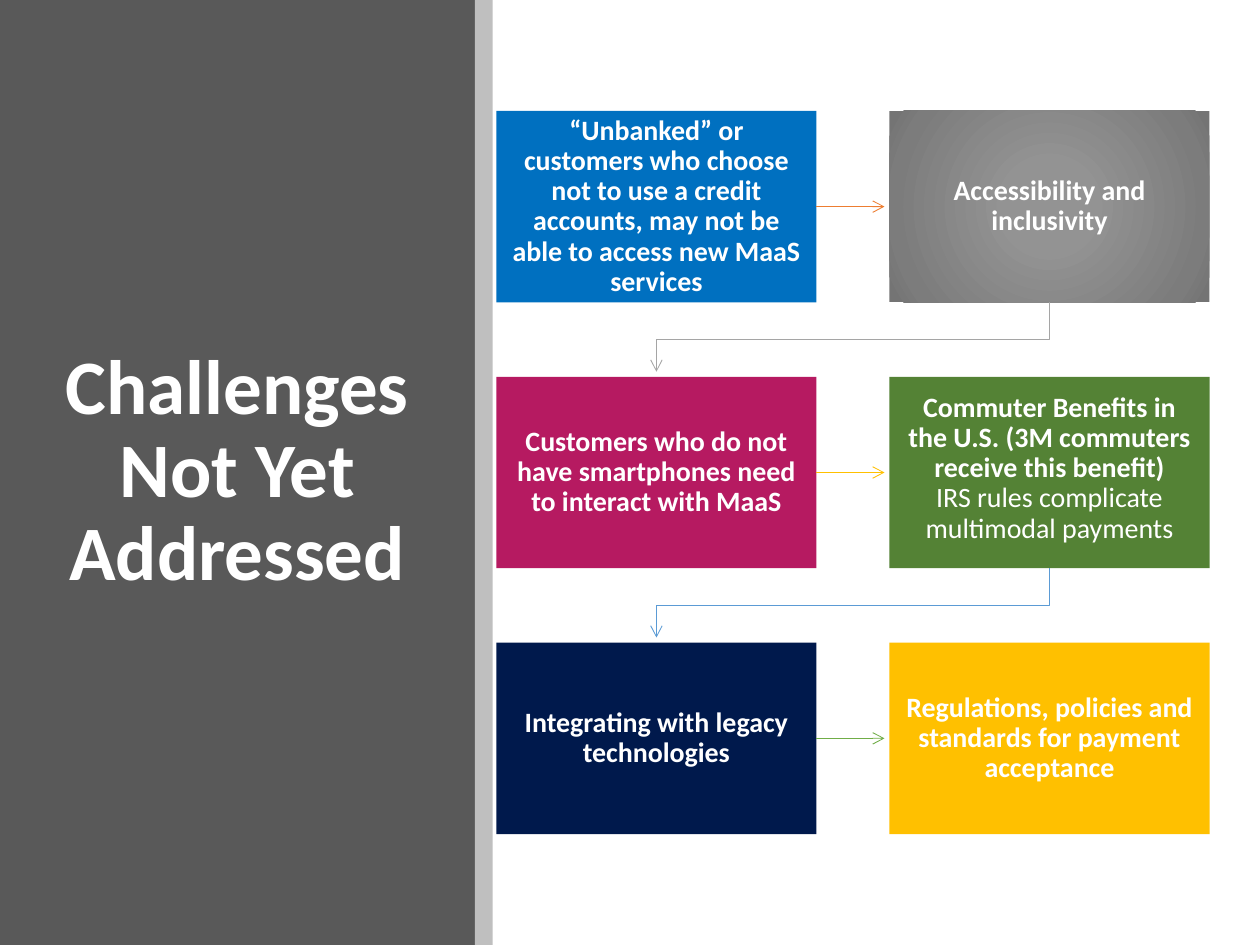
from pptx import Presentation
from pptx.dml.color import RGBColor
from pptx.enum.shapes import MSO_CONNECTOR as Connector, MSO_SHAPE as Preset
from pptx.enum.text import MSO_ANCHOR as Anchor, PP_ALIGN as Align
from pptx.oxml import parse_xml
from pptx.oxml.ns import nsdecls
from pptx.util import Inches, Pt

COLORS = {
    "title": "595959", "strip": "BFBFBF", "text": "FFFFFF",
    "blue": "0070C0", "magenta": "B61A61", "green": "548235",
    "navy": "00194C", "amber": "FFC000", "gray": "939393",
    "orange_line": "ED7D31", "gray_line": "A5A5A5", "amber_line": "FFC000",
    "blue_line": "5B9BD5", "green_line": "70AD47",
}
GRAY_STOPS = [(0, "939393"), (23, "939393"), (84, "7C7C7C"), (97, "747474")]
GRID_LEFT, GRID_TOP = 3.94, 0.88
BOX_WIDTH, BOX_HEIGHT = 2.54, 1.52
COLUMN_STEP, ROW_STEP = 3.12, 2.11
ARROW_GAP = 0.04
ROWS = [
    [("blue", ["“Unbanked” or customers who choose not to use a credit accounts, "
               "may not be able to access new MaaS services"]),
     ("gray", ["Accessibility and inclusivity"])],
    [("magenta", ["Customers who do not have smartphones need to interact with MaaS"]),
     ("green", ["Commuter Benefits in the U.S. (3M commuters receive this benefit)",
                "IRS rules complicate multimodal payments"])],
    [("navy", ["Integrating with legacy technologies"]),
     ("amber", ["Regulations, policies and standards for payment acceptance"])],
]
ACROSS_LINES = ["orange_line", "amber_line", "green_line"]
DOWN_LINES = ["gray_line", "blue_line"]


def color(name):
    """Return the named color."""
    return RGBColor.from_string(COLORS[name])


def add_block(slide, left, top, width, height, fill):
    """Add a plain filled rectangle, in inches."""
    shape = slide.shapes.add_shape(
        Preset.RECTANGLE, Inches(left), Inches(top), Inches(width), Inches(height))
    shape.shadow.inherit = False
    shape.fill.solid()
    shape.fill.fore_color.rgb = color(fill)
    shape.line.fill.background()
    return shape


def add_run(paragraph, text, size, bold=True):
    """Add one white run."""
    run = paragraph.add_run()
    run.text = text
    run.font.name = "Calibri"
    run.font.size = Pt(size)
    run.font.bold = bold
    run.font.color.rgb = color("text")


def write_lines(shape, lines, size):
    """Write a bold first line and regular lines after it, centred."""
    frame = shape.text_frame
    frame.word_wrap = True
    frame.vertical_anchor = Anchor.MIDDLE
    paragraph = frame.paragraphs[0]
    paragraph.alignment = Align.CENTER
    paragraph.line_spacing = 0.9
    for index, line in enumerate(lines):
        if index:
            paragraph.add_line_break()
        add_run(paragraph, line, size, bold=index == 0)


def set_radial_fill(shape, stops):
    """Fill a shape with a gradient spreading from its centre."""
    marks = "".join(f'<a:gs pos="{share * 1000}"><a:srgbClr val="{value}"/></a:gs>'
                    for share, value in stops)
    gradient = parse_xml(
        f'<a:gradFill {nsdecls("a")} rotWithShape="1"><a:gsLst>{marks}</a:gsLst>'
        '<a:path path="circle"><a:fillToRect l="50000" t="50000" r="50000" b="50000"/>'
        '</a:path></a:gradFill>')
    properties = shape.element.spPr
    properties.replace(properties.find("{*}solidFill"), gradient)


def add_card(slide, column, row, fill, lines):
    """Add a text card at a grid cell."""
    card = add_block(slide, GRID_LEFT + column * COLUMN_STEP, GRID_TOP + row * ROW_STEP,
                     BOX_WIDTH, BOX_HEIGHT, fill)
    if fill == "gray":
        set_radial_fill(card, GRAY_STOPS)
    write_lines(card, lines, 16)
    frame = card.text_frame
    frame.margin_left = frame.margin_right = Inches(0.12)
    frame.margin_top = frame.margin_bottom = Inches(0.13)
    if len(lines) > 1:
        frame.vertical_anchor = Anchor.TOP
    return card


def style_arrow(shape, line_color):
    """Give a line its color, thin width and open arrowhead."""
    shape.line.color.rgb = color(line_color)
    shape.line.width = Pt(0.5)
    shape.line._get_or_add_ln().append(
        parse_xml(f'<a:tailEnd {nsdecls("a")} type="arrow"/>'))


def add_across_arrow(slide, left_card, right_card, line_color):
    """Add a straight arrow from a card to its right neighbour."""
    middle = left_card.top + left_card.height // 2
    arrow = slide.shapes.add_connector(
        Connector.STRAIGHT, left_card.left + left_card.width, middle,
        right_card.left - Inches(ARROW_GAP), middle)
    arrow.begin_connect(left_card, 3)
    style_arrow(arrow, line_color)
    arrow.element.spPr.append(parse_xml(f'<a:effectLst {nsdecls("a")}/>'))


def add_down_arrow(slide, upper_card, lower_card, line_color):
    """Add a bent arrow from a card to the start of the next row."""
    start_x = upper_card.left + upper_card.width // 2
    start_y = upper_card.top + upper_card.height
    end_x = lower_card.left + lower_card.width // 2
    bend_y = (start_y + lower_card.top) // 2
    builder = slide.shapes.build_freeform(start_x, start_y)
    builder.add_line_segments(
        [(start_x, bend_y), (end_x, bend_y), (end_x, lower_card.top - Inches(ARROW_GAP))],
        close=False)
    arrow = builder.convert_to_shape()
    arrow.shadow.inherit = False
    arrow.fill.background()
    style_arrow(arrow, line_color)


def main():
    """Build the slide."""
    presentation = Presentation()
    presentation.slide_width, presentation.slide_height = Inches(10), Inches(7.5)
    slide = presentation.slides.add_slide(presentation.slide_layouts[6])
    title = add_block(slide, 0, 0, 3.77, 7.5, "title")
    write_lines(title, ["Challenges Not Yet Addressed"], 44)
    cards = [[add_card(slide, column, row, fill, lines)
              for column, (fill, lines) in enumerate(cells)]
             for row, cells in enumerate(ROWS)]
    for (left_card, right_card), line_color in zip(cards, ACROSS_LINES):
        add_across_arrow(slide, left_card, right_card, line_color)
    for upper, lower, line_color in zip(cards, cards[1:], DOWN_LINES):
        add_down_arrow(slide, upper[1], lower[0], line_color)
    add_block(slide, 3.77, 0, 0.14, 7.5, "strip")
    presentation.save("out.pptx")


if __name__ == "__main__":
    main()
